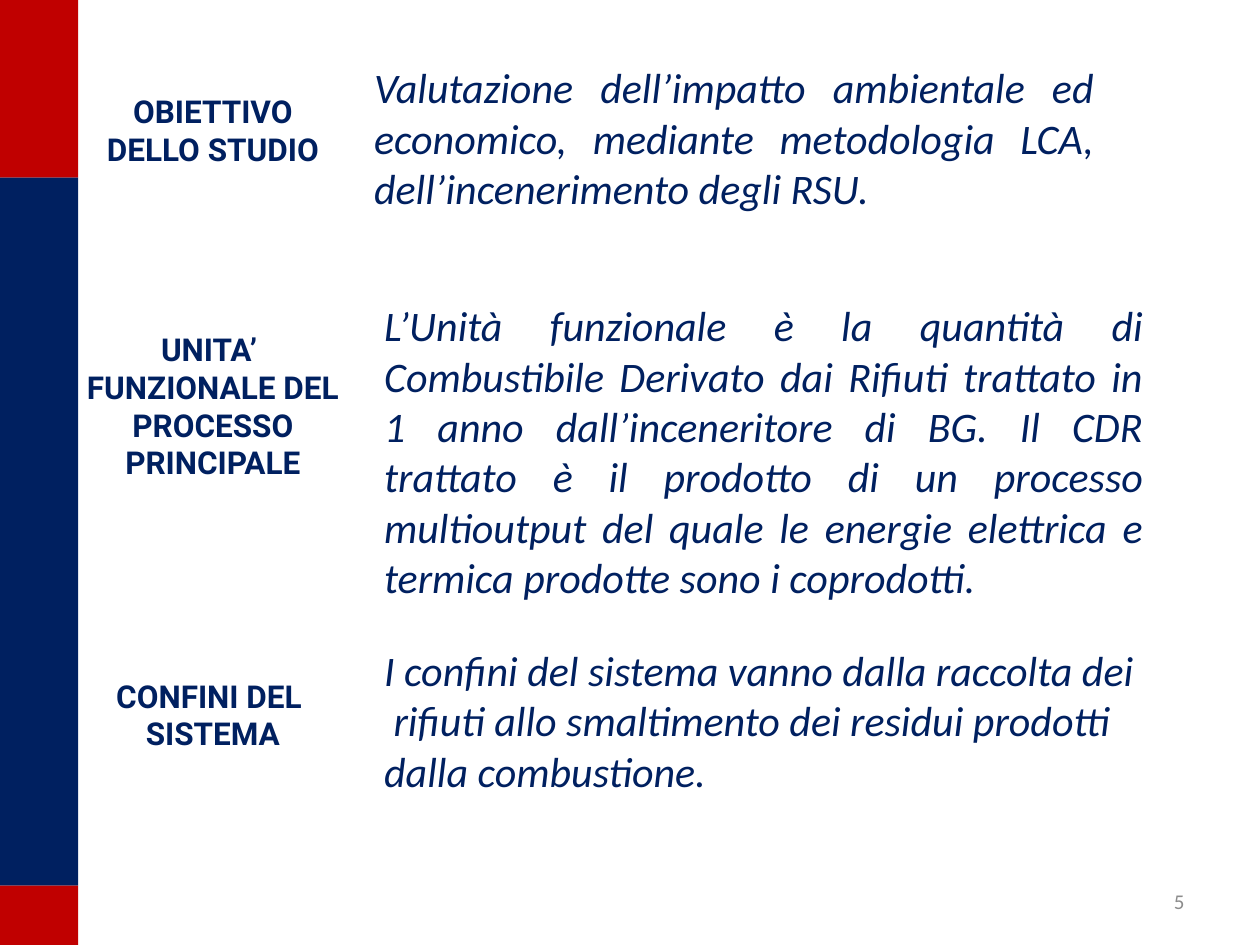
from pptx import Presentation
from pptx.dml.color import RGBColor
from pptx.enum import shapes, text
from pptx.util import Inches, Pt

COLORS = {"red": "C00000", "navy": "002060", "gray": "8C8C8C"}

# Content: side bands as (height, colour), stacked from the top
BAND_WIDTH = 0.62
BANDS = [(1.41, "red"), (5.62, "navy"), (0.47, "red")]

# Sections: label and description, each with its box and paragraphs
LABEL_LEFT, LABEL_WIDTH = 0.59, 2.2
SECTIONS = [
    {"label": ["OBIETTIVO", "DELLO STUDIO"],
     "label_box": (0.68, 0.71),
     "body": ["Valutazione dell’impatto ambientale ed economico, mediante "
              "metodologia LCA, dell’incenerimento degli RSU."],
     "body_box": (2.87, 0.44, 5.91, 1.31)},
    {"label": ["UNITA’ ", "FUNZIONALE DEL PROCESSO PRINCIPALE"],
     "label_box": (2.57, 1.31),
     "body": ["L’Unità funzionale è la quantità di Combustibile Derivato dai "
              "Rifiuti trattato in 1 anno dall’inceneritore di BG. Il CDR "
              "trattato è il prodotto di un processo multioutput del quale le "
              "energie elettrica e termica prodotte sono i coprodotti."],
     "body_box": (2.95, 2.33, 6.22, 2.52)},
    {"label": ["CONFINI DEL ", "SISTEMA"],
     "label_box": (5.32, 0.71),
     "body": ["I confini del sistema vanno dalla raccolta dei",
              " rifiuti allo smaltimento dei residui prodotti ",
              "dalla combustione."],
     "body_box": (2.95, 4.93, 6.22, 1.57),
     "frame": {"word_wrap": False, "vertical_anchor": text.MSO_ANCHOR.MIDDLE}},
]
PAGE_NUMBER = "5"

# Text formats
LABEL = {"name": "Roboto", "size": Pt(18), "bold": True}
BODY = {"name": "Calibri", "size": Pt(24), "italic": True}
NUMBER = {"name": "Calibri", "size": Pt(12)}


def set_values(target, values):
    for name, value in values.items():
        setattr(target, name, value)


def add_text(slide, box, lines, font, color, alignment, frame=None):
    text_frame = slide.shapes.add_textbox(*map(Inches, box)).text_frame
    set_values(text_frame, {"word_wrap": True, **(frame or {})})
    text_frame.text = "\n".join(lines)
    for paragraph in text_frame.paragraphs:
        paragraph.alignment = alignment
        set_values(paragraph.font, font)
        paragraph.font.color.rgb = RGBColor.from_string(COLORS[color])


def main():
    presentation = Presentation()
    presentation.slide_width = Inches(10)
    presentation.slide_height = Inches(7.5)
    slide = presentation.slides.add_slide(presentation.slide_layouts[6])

    # Side bands
    top = 0
    for height, color in BANDS:
        band = slide.shapes.add_shape(
            shapes.MSO_SHAPE.RECTANGLE, 0, Inches(top),
            Inches(BAND_WIDTH), Inches(height))
        band.shadow.inherit = False
        band.fill.solid()
        band.fill.fore_color.rgb = RGBColor.from_string(COLORS[color])
        band.line.fill.background()
        top += height

    # Labels and descriptions
    for section in SECTIONS:
        label_top, label_height = section["label_box"]
        add_text(slide, (LABEL_LEFT, label_top, LABEL_WIDTH, label_height),
                 section["label"], LABEL, "navy", text.PP_ALIGN.CENTER)
        add_text(slide, section["body_box"], section["body"], BODY, "navy",
                 text.PP_ALIGN.JUSTIFY, section.get("frame"))

    # Page number
    add_text(slide, (7.17, 6.95, 2.33, 0.4), [PAGE_NUMBER], NUMBER, "gray",
             text.PP_ALIGN.RIGHT, {"vertical_anchor": text.MSO_ANCHOR.MIDDLE})

    presentation.save("out.pptx")


if __name__ == "__main__":
    main()
